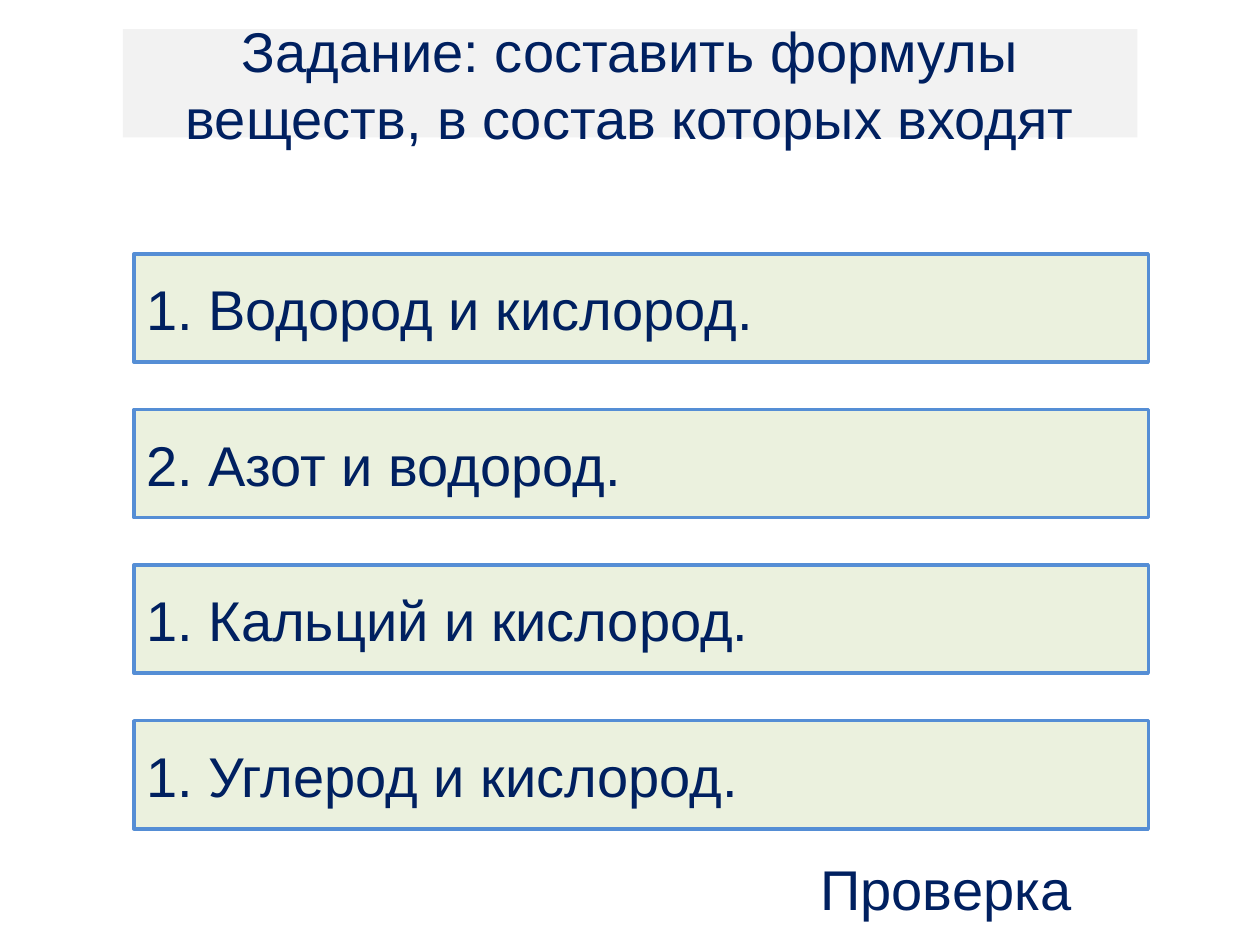
from pptx import Presentation
from pptx import util as u
from pptx.dml.color import RGBColor
from pptx.enum import shapes, text

NAVY = RGBColor(0x00, 0x20, 0x60)
GREY = RGBColor(0xF2, 0xF2, 0xF2)
GREEN = RGBColor(0xEB, 0xF1, 0xDE)
BLUE = RGBColor(0x55, 0x8E, 0xD5)

TASKS = [
    "1. Водород и кислород.",
    "2. Азот и водород.",
    "1. Кальций и кислород.",
    "1. Углерод и кислород.",
]


def write(shape, words, align):
    frame = shape.text_frame
    frame.word_wrap = True
    frame.vertical_anchor = text.MSO_ANCHOR.MIDDLE
    par = frame.paragraphs[0]
    par.text = words
    par.alignment = align
    par.font.name = "Arial"
    par.font.size = u.Pt(32)
    par.font.color.rgb = NAVY


def add_bar(slide, box, words, fill, align, line=None):
    bar = slide.shapes.add_shape(shapes.MSO_SHAPE.RECTANGLE, *box)
    bar.shadow.inherit = False
    bar.fill.solid()
    bar.fill.fore_color.rgb = fill
    if line is None:
        bar.line.fill.background()
    else:
        bar.line.color.rgb = line
        bar.line.width = u.Pt(2)
    write(bar, words, align)


def add_title(slide, box):
    add_bar(slide, box, "Задание: составить формулы веществ, в состав которых входят",
            GREY, text.PP_ALIGN.CENTER)


def add_tasks(slide, box):
    left, top, width, height = box
    bar = u.Cm(2.18)
    step = (height - bar) // (len(TASKS) - 1)
    for i, task in enumerate(TASKS):
        add_bar(slide, (left, top + i * step, width, bar), task,
                GREEN, text.PP_ALIGN.LEFT, BLUE)


def add_check(slide, box):
    label = slide.shapes.add_textbox(*box)
    write(label, "Проверка", text.PP_ALIGN.CENTER)


def main():
    deck = Presentation()
    deck.slide_width, deck.slide_height = u.Cm(25.4), u.Cm(19.05)
    slide = deck.slides.add_slide(deck.slide_layouts[6])

    # Heading
    add_title(slide, (u.Cm(2.48), u.Cm(0.59), u.Cm(20.45), u.Cm(2.18)))
    # Four evenly spaced tasks
    add_tasks(slide, (u.Cm(2.7), u.Cm(5.12), u.Cm(20.45), u.Cm(11.59)))
    # Label for the answers
    add_check(slide, (u.Cm(15.5), u.Cm(17.12), u.Cm(7.14), u.Cm(1.58)))

    deck.save("out.pptx")


if __name__ == "__main__":
    main()
